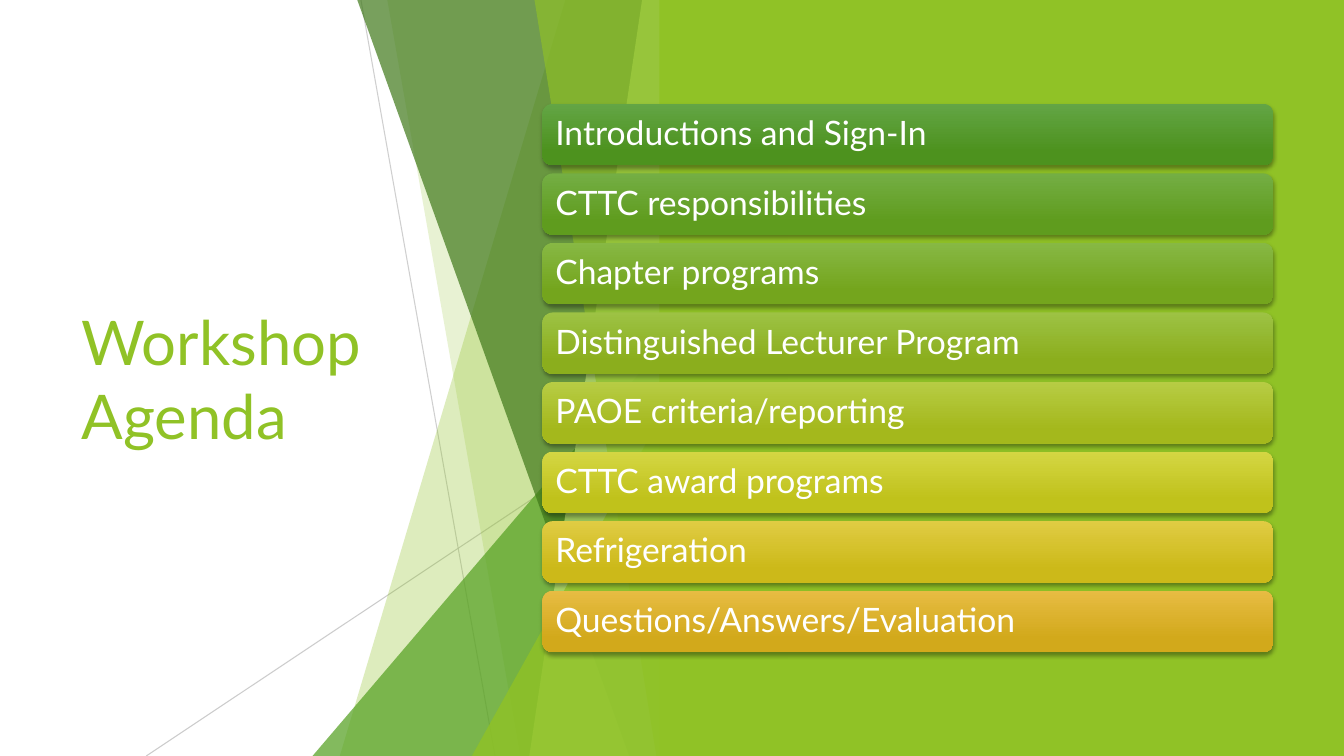
from lxml import etree
from pptx import Presentation, util as u
from pptx.dml import color as dml_color
from pptx.enum import shapes, text
from pptx.oxml import ns

COLOURS = {
    "white": "FFFFFF",
    "black": "000000",
    "grey": "BFBFBF",
    "lime": "90C226",
    "pale_lime": "C0E474",
    "green": "54A021",
    "dark_green": "3F7819",
}
WIDTH, HEIGHT = 1333, 750
BAR_TOP, BAR_PITCH = 103, 69
AGENDA = [
    ("Introductions and Sign-In", "63A545", "4D921E"),
    ("CTTC responsibilities", "74AE44", "5F9C1E"),
    ("Chapter programs", "87B844", "74A51D"),
    ("Distinguished Lecturer Program", "9DC244", "8BAE1D"),
    ("PAOE criteria/reporting", "B7CC44", "A4B81C"),
    ("CTTC award programs", "D4D643", "C0C21B"),
    ("Refrigeration", "E0CC43", "CCB919"),
    ("Questions/Answers/Evaluation", "E7BC43", "D2A91B"),
]


class SlideBuilder:
    """Draw styled elements on one slide, with lengths in px at 100 to the inch."""

    SCALE = 9144
    FONT = "Lato"

    def __init__(self, presentation):
        presentation.slide_width = self.px(WIDTH)
        presentation.slide_height = self.px(HEIGHT)
        self.slide = presentation.slides.add_slide(presentation.slide_layouts[6])

    def px(self, length):
        return u.Emu(length * self.SCALE)

    def rgb(self, name):
        return dml_color.RGBColor.from_string(COLOURS.get(name, name))

    def child(self, parent, tag, **attributes):
        return etree.SubElement(parent, ns.qn(tag), attributes)

    def set_opacity(self, shape, percent):
        for colour in shape.element.spPr.iter(ns.qn("a:srgbClr")):
            self.child(colour, "a:alpha", val=str(percent * 1000))

    def paint(self, shape, colour, opacity=100):
        shape.shadow.inherit = False
        shape.line.fill.background()
        shape.fill.solid()
        shape.fill.fore_color.rgb = self.rgb(colour)
        if opacity < 100:
            self.set_opacity(shape, opacity)

    def preset(self, kind, left, top, width, height):
        return self.slide.shapes.add_shape(
            kind, *map(self.px, (left, top, width, height)))

    def rectangle(self, left, top, width, height, colour):
        shape = self.preset(shapes.MSO_SHAPE.RECTANGLE, left, top, width, height)
        self.paint(shape, colour)

    def triangle(self, left, top, width, height, colour, opacity):
        shape = self.preset(
            shapes.MSO_SHAPE.ISOSCELES_TRIANGLE, left, top, width, height)
        shape.adjustments[0] = 1
        self.paint(shape, colour, opacity)

    def facet(self, top_left, bottom_left, right, colour, opacity):
        builder = self.slide.shapes.build_freeform(top_left, -1, scale=self.SCALE)
        builder.add_line_segments(
            [(right, -1), (right, HEIGHT), (bottom_left, HEIGHT)], close=True)
        self.paint(builder.convert_to_shape(), colour, opacity)

    def line(self, start, end, opacity):
        connector = self.slide.shapes.add_connector(
            shapes.MSO_CONNECTOR.STRAIGHT, *map(self.px, start + end))
        connector.line.width = u.Pt(0.75)
        connector.line.color.rgb = self.rgb("grey")
        self.set_opacity(connector, opacity)
        self.child(connector.element.spPr, "a:effectLst")

    def add_words(self, shape, words, size, colour, spacing=1.0):
        frame = shape.text_frame
        frame.word_wrap = True
        frame.vertical_anchor = text.MSO_ANCHOR.MIDDLE
        frame.margin_left = frame.margin_right = self.px(10)
        paragraph = frame.paragraphs[0]
        paragraph.alignment = text.PP_ALIGN.LEFT
        paragraph.line_spacing = spacing
        run = paragraph.add_run()
        run.text = words
        run.font.name = self.FONT
        run.font.size = u.Pt(size)
        run.font.color.rgb = self.rgb(colour)

    def title(self, left, top, width, height, words):
        box = self.slide.shapes.add_textbox(
            *map(self.px, (left, top, width, height)))
        self.add_words(box, words, 44, "lime")

    def bar(self, left, top, width, height, words, upper, lower):
        shape = self.preset(
            shapes.MSO_SHAPE.ROUNDED_RECTANGLE, left, top, width, height)
        shape.line.fill.background()
        shape.fill.gradient()
        shape.fill.gradient_angle = 270
        stops = zip(shape.fill.gradient_stops, (0, 0.78), (upper, lower))
        for stop, position, colour in stops:
            stop.position = position
            stop.color.rgb = self.rgb(colour)
        self.drop_shadow(shape)
        self.add_words(shape, words, 24, "white", 0.9)

    def drop_shadow(self, shape):
        shape.shadow.inherit = False
        effects = shape.element.spPr.find(ns.qn("a:effectLst"))
        shadow = self.child(
            effects, "a:outerShdw", blurRad=str(u.Pt(3)), dist=str(u.Pt(2)),
            dir="5400000", rotWithShape="0")
        colour = self.child(shadow, "a:srgbClr", val=COLOURS["black"])
        self.child(colour, "a:alpha", val="35000")


def main():
    presentation = Presentation()
    builder = SlideBuilder(presentation)
    builder.rectangle(0, 0, WIDTH, HEIGHT, "white")
    builder.title(71, 151, 388, 448, "Workshop Agenda")

    builder.line((358, 0), (491, HEIGHT), 75)
    builder.line((666, 403), (145, HEIGHT), 80)
    builder.facet(561, 337, 666, "lime", 30)
    builder.facet(384, 516, 667, "lime", 20)
    builder.triangle(310, 333, 356, 417, "green", 72)
    builder.facet(354, 624, 666, "dark_green", 70)
    builder.facet(637, 525, 666, "pale_lime", 70)
    builder.facet(530, 651, 666, "lime", 65)
    builder.triangle(468, 393, 199, 357, "lime", 80)
    builder.rectangle(654, 0, WIDTH - 654, HEIGHT, "lime")

    for index, (words, upper, lower) in enumerate(AGENDA):
        top = BAR_TOP + index * BAR_PITCH
        builder.bar(538, top, 725, 61, words, upper, lower)
    presentation.save("out.pptx")


if __name__ == "__main__":
    main()
